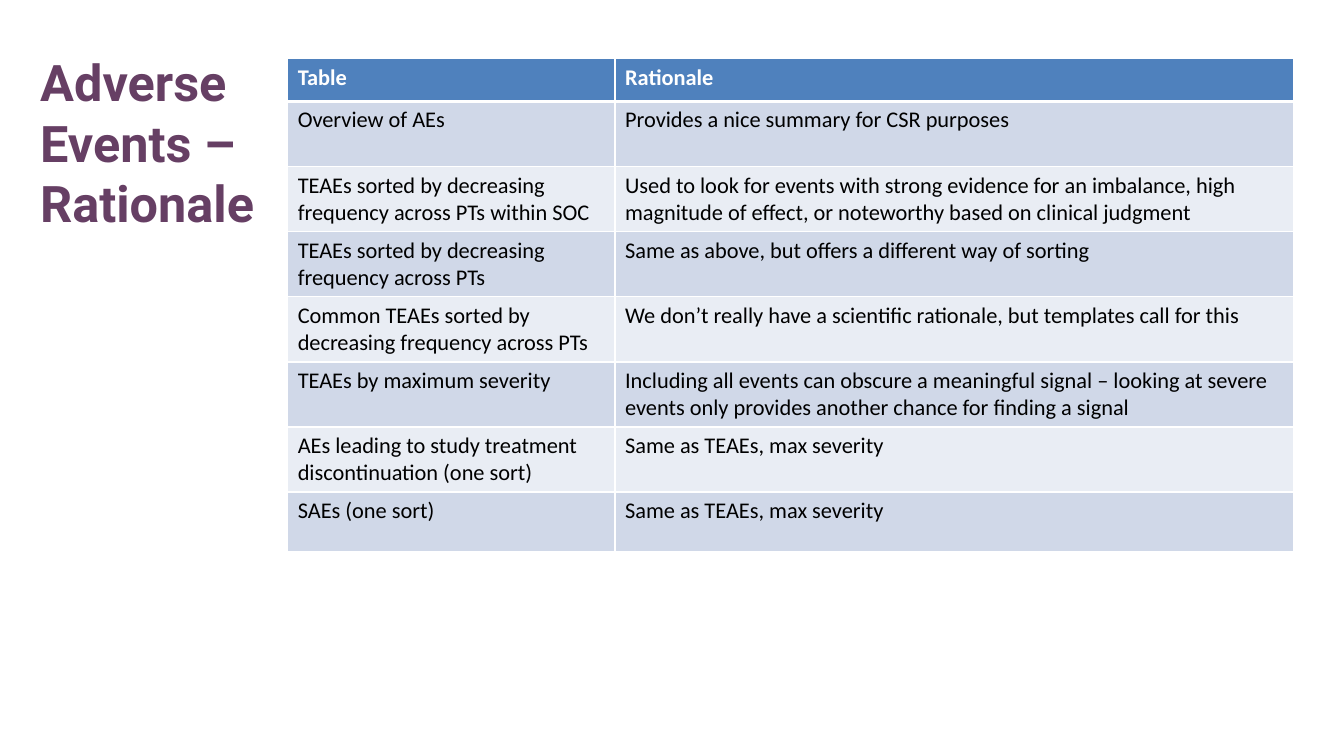
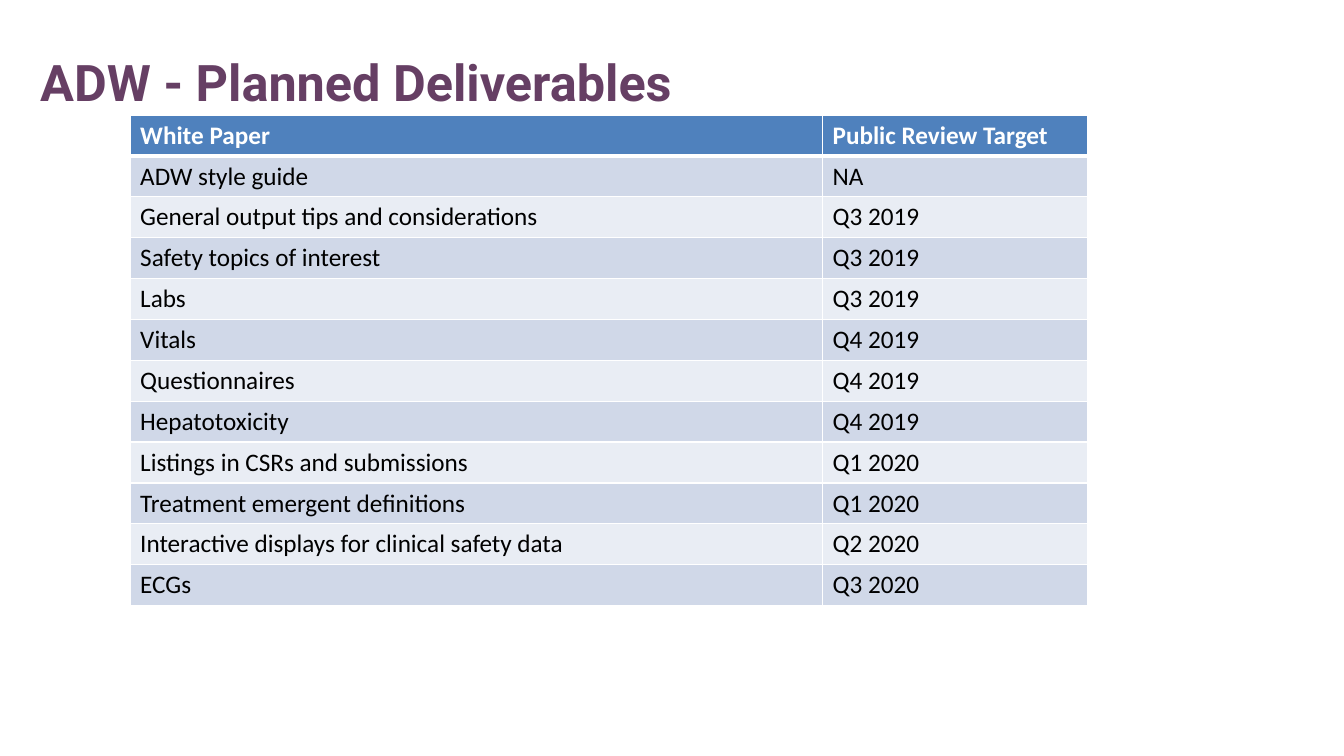
from lxml import etree
from pptx import Presentation
from pptx.dml.color import RGBColor
from pptx.enum.text import MSO_ANCHOR, MSO_AUTO_SIZE, PP_ALIGN
from pptx.oxml.ns import qn
from pptx.util import Cm, Pt

LEFT, TOP, NO_FIT = PP_ALIGN.LEFT, MSO_ANCHOR.TOP, MSO_AUTO_SIZE.NONE
TITLE_ONLY = 5

PLUM = RGBColor(0x66, 0x3F, 0x64)
BLUE = RGBColor(0x4F, 0x81, 0xBD)
BAND_DARK = RGBColor(0xD0, 0xD8, 0xE8)
BAND_LIGHT = RGBColor(0xE9, 0xED, 0xF4)
WHITE = RGBColor(0xFF, 0xFF, 0xFF)
BLACK = RGBColor(0, 0, 0)

RATIONALE = [
    ("Table", "Rationale"),
    ("Overview of AEs", "Provides a nice summary for CSR purposes"),
    ("TEAEs sorted by decreasing frequency across PTs within SOC",
     "Used to look for events with strong evidence for an imbalance, high "
     "magnitude of effect, or noteworthy based on clinical judgment"),
    ("TEAEs sorted by decreasing frequency across PTs",
     "Same as above, but offers a different way of sorting"),
    ("Common TEAEs sorted by decreasing frequency across PTs",
     "We don’t really have a scientific rationale, but templates call for this"),
    ("TEAEs by maximum severity",
     "Including all events can obscure a meaningful signal – looking at severe "
     "events only provides another chance for finding a signal"),
    ("AEs leading to study treatment discontinuation (one sort)",
     "Same as TEAEs, max severity"),
    ("SAEs (one sort)", "Same as TEAEs, max severity"),
]

DELIVERABLES = [
    ("White Paper", "Public Review Target"),
    ("ADW style guide", "NA"),
    ("General output tips and considerations", "Q3 2019"),
    ("Safety topics of interest", "Q3 2019"),
    ("Labs", "Q3 2019"),
    ("Vitals", "Q4 2019"),
    ("Questionnaires", "Q4 2019"),
    ("Hepatotoxicity", "Q4 2019"),
    ("Listings in CSRs and submissions", "Q1 2020"),
    ("Treatment emergent definitions", "Q1 2020"),
    ("Interactive displays for clinical safety data", "Q2 2020"),
    ("ECGs", "Q3 2020"),
]


def write(tf, text, font="Calibri", size=16, color=BLACK, bold=False):
    p = tf.paragraphs[0]
    p.alignment = LEFT
    r = p.add_run()
    r.text = text
    r.font.name, r.font.size, r.font.bold = font, Pt(size), bold
    r.font.color.rgb = color


def set_borders(cell, **widths):
    """Draw white borders; keywords L, R, T and B give widths in points."""
    tcPr = cell._tc.get_or_add_tcPr()
    for side, width in widths.items():
        ln = etree.SubElement(tcPr, qn(f"a:ln{side}"), w=str(Pt(width)))
        fill = etree.SubElement(ln, qn("a:solidFill"))
        etree.SubElement(fill, qn("a:srgbClr"), val=str(WHITE))


class Deck:
    """Holds the presentation, its style and the current slide."""

    def __init__(self):
        self.prs = Presentation()
        self.prs.slide_width, self.prs.slide_height = Cm(33.87), Cm(19.05)

    def add_slide(self, title, width, height):
        self.s = self.prs.slides.add_slide(self.prs.slide_layouts[TITLE_ONLY])
        sp = self.s.shapes.title
        sp.left, sp.top = Cm(0.76), Cm(1.17)
        sp.width, sp.height = Cm(width), Cm(height)
        tf = sp.text_frame
        tf.word_wrap, tf.auto_size, tf.vertical_anchor = True, NO_FIT, TOP
        write(tf, title, font="Roboto", size=36, color=PLUM, bold=True)

    def add_table(self, rows, left, top, col_widths, row_heights, size):
        """Add a banded table whose first row is the header; lengths in cm."""
        table = self.s.shapes.add_table(
            len(rows), len(col_widths), Cm(left), Cm(top),
            Cm(sum(col_widths)), Cm(sum(row_heights))).table
        for column, width in zip(table.columns, col_widths):
            column.width = Cm(width)
        for i, (row, height) in enumerate(zip(table.rows, row_heights)):
            row.height = Cm(height)
            header = i == 0
            band = BAND_DARK if i % 2 else BAND_LIGHT
            for cell, text in zip(row.cells, rows[i]):
                set_borders(cell, L=1, R=1, T=3 if i == 1 else 1,
                            B=3 if header else 1)
                cell.fill.solid()
                cell.fill.fore_color.rgb = BLUE if header else band
                write(cell.text_frame, text, size=size, bold=header,
                      color=WHITE if header else BLACK)


def main():
    deck = Deck()
    deck.add_slide("Adverse Events – Rationale", 7.04, 5.69)
    deck.add_table(RATIONALE, 7.25, 1.48, [8.25, 17.1],
                   [1.08] + [1.64] * 6 + [1.5], size=16)
    deck.add_slide("ADW - Planned Deliverables", 32.46, 2.82)
    deck.add_table(DELIVERABLES, 3.28, 2.9, [17.45, 6.68],
                   [1.03] * len(DELIVERABLES), size=18)
    deck.prs.save("out.pptx")


if __name__ == "__main__":
    main()
